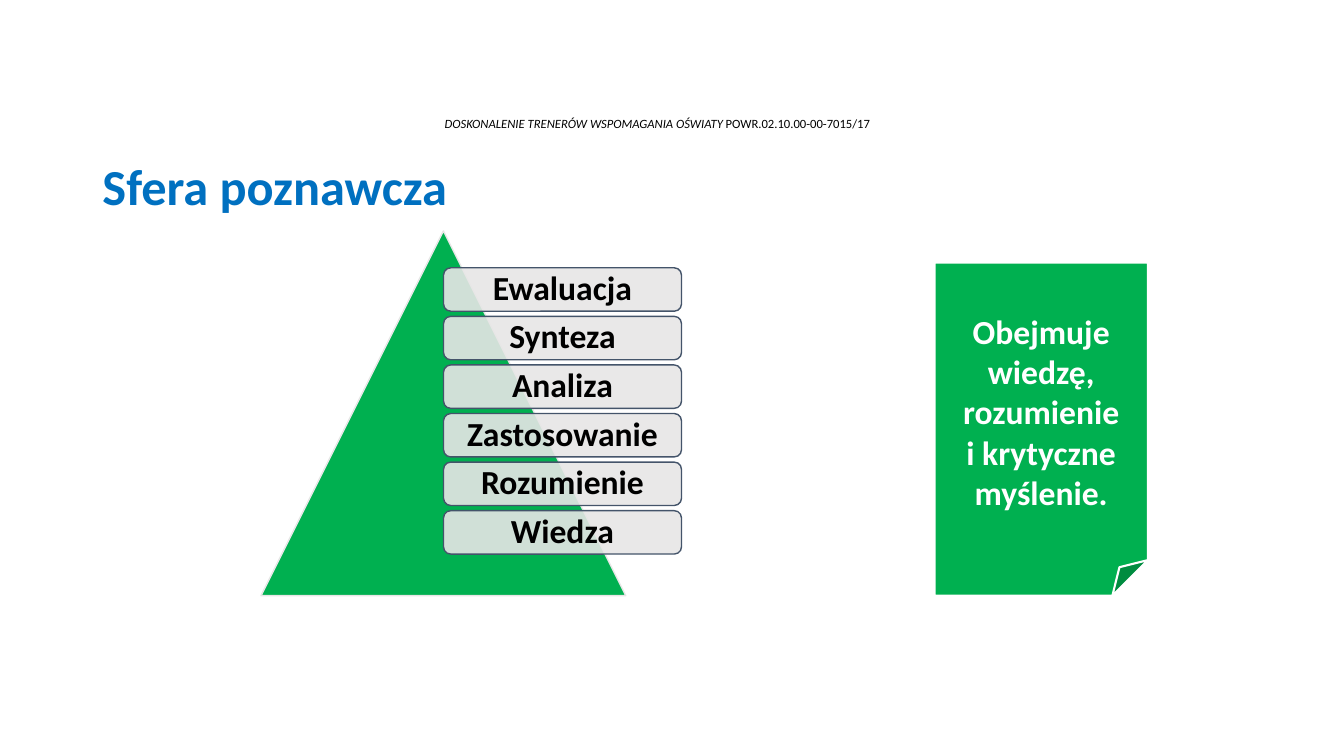
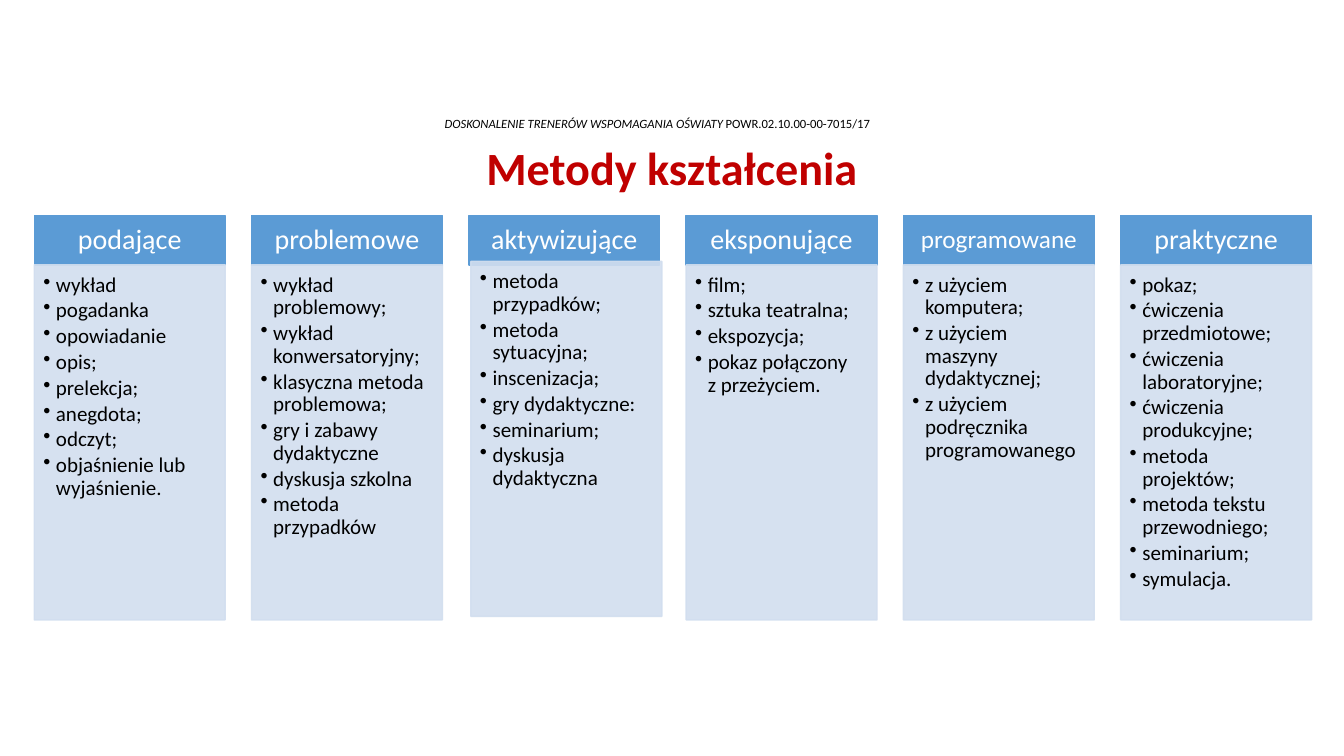
from lxml import etree
from pptx import Presentation
from pptx.dml.color import RGBColor
from pptx.enum.shapes import MSO_SHAPE
from pptx.enum.text import MSO_ANCHOR, MSO_AUTO_SIZE, PP_ALIGN
from pptx.oxml.ns import qn
from pptx.util import Pt

LEFT, CENTER = PP_ALIGN.LEFT, PP_ALIGN.CENTER
TOP, MIDDLE = MSO_ANCHOR.TOP, MSO_ANCHOR.MIDDLE
NO_FIT = MSO_AUTO_SIZE.NONE
TRIANGLE, ROUNDED = MSO_SHAPE.ISOSCELES_TRIANGLE, MSO_SHAPE.ROUNDED_RECTANGLE
RECTANGLE, FOLDED = MSO_SHAPE.RECTANGLE, MSO_SHAPE.FOLDED_CORNER


class Theme:
    font = "Calibri"
    black, white = "000000", "FFFFFF"
    blue_title, red_title = "0070C0", "C00000"
    green, gray, slate = "00B050", "E7E6E6", "44546A"
    blue, pale_blue = "5B9BD5", "D2DEEF"
    strip, item, head_small, head, label = 9, 15, 18, 20, 24
    title_small, title = 33, 36


def write(p, text, size, color, bold=False, italic=False, align=CENTER, spacing=0.9):
    p.alignment = align
    p.line_spacing = spacing
    for i, line in enumerate(text.split("\n")):
        if i:
            p.add_line_break()
        r = p.add_run()
        r.text = line
        r.font.name = Theme.font
        r.font.size = Pt(size)
        r.font.bold = bold
        r.font.italic = italic
        r.font.color.rgb = RGBColor.from_string(color)


def panel(slide, kind, at, fill, line, weight=1, alpha=None, insets=(0, 0, 0, 0), anchor=MIDDLE):
    sp = slide.shapes.add_shape(kind, *map(Pt, at))
    sp.shadow.inherit = False
    sp.fill.solid()
    sp.fill.fore_color.rgb = RGBColor.from_string(fill)
    sp.line.color.rgb = RGBColor.from_string(line)
    sp.line.width = Pt(weight)
    if alpha:
        for clr in sp.element.spPr.iter(qn("a:srgbClr")):
            if clr.get("val") == fill:
                etree.SubElement(clr, qn("a:alpha")).set("val", str(alpha * 1000))
    tf = sp.text_frame
    tf.word_wrap = True
    tf.vertical_anchor = anchor
    tf.margin_left, tf.margin_top, tf.margin_right, tf.margin_bottom = map(Pt, insets)
    return tf


prs = Presentation()
prs.slide_width, prs.slide_height = Pt(960), Pt(540)
layout = prs.slide_layouts[5]

titles = [
    ("Sfera poznawcza", (66, 107, 264, 51), Theme.title, Theme.blue_title, LEFT, TOP, 1.0),
    ("Metody kształcenia", (66, 99, 828, 46), Theme.title_small, Theme.red_title, CENTER, MIDDLE, 0.9),
]
for text, at, size, color, align, anchor, spacing in titles:
    s = prs.slides.add_slide(layout)
    title = s.shapes.title
    title.left, title.top, title.width, title.height = map(Pt, at)
    tf = title.text_frame
    tf.auto_size = NO_FIT
    tf.word_wrap = align == CENTER
    tf.vertical_anchor = anchor
    write(tf.paragraphs[0], text, size, color, bold=True, align=align, spacing=spacing)

pyramid_slide, methods_slide = prs.slides

strip = pyramid_slide.shapes.add_textbox(Pt(57), Pt(80), Pt(825), Pt(18))
tf = strip.text_frame
tf.word_wrap = True
tf.vertical_anchor = MIDDLE
tf.margin_top = tf.margin_bottom = 0
p = tf.paragraphs[0]
write(p, "DOSKONALENIE TRENERÓW WSPOMAGANIA OŚWIATY ", Theme.strip, Theme.black, italic=True)
write(p, "POWR.02.10.00-00-7015/17", Theme.strip, Theme.black)
strip.element.nvSpPr.cNvPr.set("id", "20")
layout.shapes.element.append(strip.element)

panel(pyramid_slide, TRIANGLE, (186.5, 165, 260.5, 260.5), Theme.green, Theme.gray)
levels = ["Ewaluacja", "Synteza", "Analiza", "Zastosowanie", "Rozumienie", "Wiedza"]
for i, level in enumerate(levels):
    at = (316.8, 191.3 + 34.7 * i, 170, 31)
    tf = panel(pyramid_slide, ROUNDED, at, Theme.gray, Theme.slate, alpha=90)
    write(tf.paragraphs[0], level, Theme.label, Theme.black, bold=True)

tf = panel(pyramid_slide, FOLDED, (667.5, 187.5, 152.5, 238), Theme.green, Theme.white,
           weight=1.5, insets=(7.2, 3.6, 7.2, 3.6))
write(tf.paragraphs[0], "Obejmuje wiedzę, rozumienie\ni krytyczne myślenie.",
      Theme.label, Theme.white, bold=True, spacing=1.0)

columns = [
    ("podające", Theme.head, (0, 0),
     ["wykład", "pogadanka", "opowiadanie", "opis;", "prelekcja;", "anegdota;", "odczyt;",
      "objaśnienie lub wyjaśnienie."]),
    ("problemowe", Theme.head, (0, 0),
     ["wykład problemowy;", "wykład konwersatoryjny;", "klasyczna metoda problemowa;",
      "gry i zabawy dydaktyczne", "dyskusja szkolna", "metoda przypadków"]),
    ("aktywizujące", Theme.head, (1.5, -2.5),
     ["metoda przypadków;", "metoda sytuacyjna;", "inscenizacja;", "gry dydaktyczne:",
      "seminarium;", "dyskusja dydaktyczna"]),
    ("eksponujące", Theme.head, (0, 0),
     ["film;", "sztuka teatralna;", "ekspozycja;", "pokaz połączony\nz przeżyciem."]),
    ("programowane", Theme.head_small, (0, 0),
     ["z użyciem komputera;", "z użyciem maszyny dydaktycznej;",
      "z użyciem podręcznika programowanego"]),
    ("praktyczne", Theme.head, (0, 0),
     ["pokaz;", "ćwiczenia przedmiotowe;", "ćwiczenia laboratoryjne;", "ćwiczenia produkcyjne;",
      "metoda projektów;", "metoda tekstu przewodniego;", "seminarium;", "symulacja."]),
]
for i, (heading, size, (dx, dy), items) in enumerate(columns):
    x = 24.5 + 155.2 * i
    tf = panel(methods_slide, RECTANGLE, (x, 154, 136.4, 35.2), Theme.blue, Theme.blue,
               insets=(10, 6.5, 10, 6.5))
    write(tf.paragraphs[0], heading, size, Theme.white)
    tf = panel(methods_slide, RECTANGLE, (x + dx, 189.2 + dy, 136.4, 253.6), Theme.pale_blue,
               Theme.pale_blue, alpha=90, insets=(6.5, 6.5, 8.5, 9.5), anchor=TOP)
    for j, item in enumerate(items):
        p = tf.add_paragraph() if j else tf.paragraphs[0]
        p.space_after = Pt(2.2)
        pPr = p._p.get_or_add_pPr()
        pPr.set("marL", str(Pt(9)))
        pPr.set("indent", str(-Pt(9)))
        etree.SubElement(pPr, qn("a:buChar")).set("char", "•")
        write(p, item, Theme.item, Theme.black, align=LEFT)

prs.save("out.pptx")
